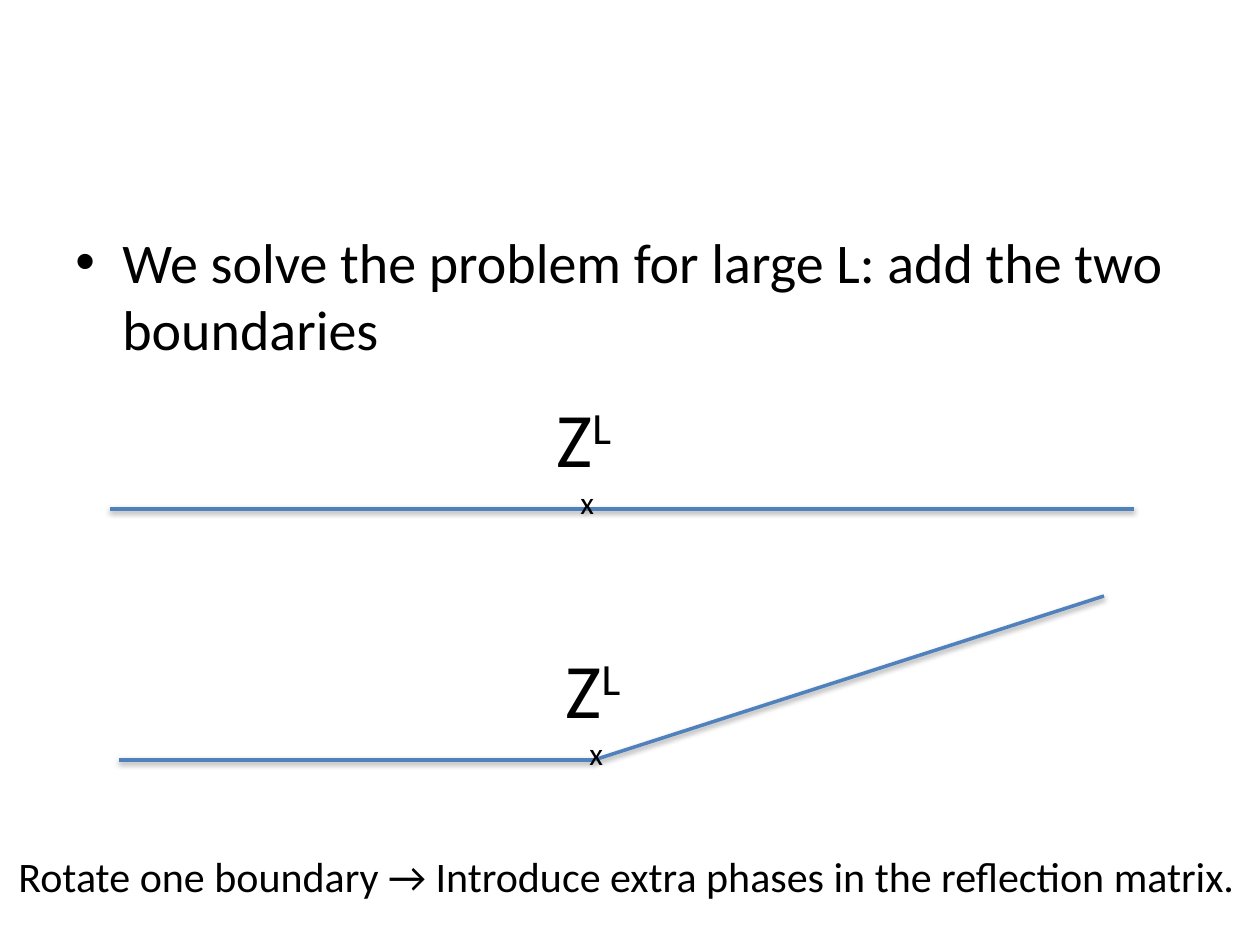
import pptx
import pptx.dml.color
import pptx.enum.shapes
import pptx.enum.text
import pptx.util
from lxml import etree

PX = 914400 / 126
BLACK = pptx.dml.color.RGBColor(0x00, 0x00, 0x00)
BLUE = pptx.dml.color.RGBColor(0x4F, 0x81, 0xBD)


def px(length):
    return pptx.util.Emu(round(length * PX))


def add_text(slide, left, top, width, height, text, size, wrap=False):
    shape = slide.shapes.add_textbox(px(left), px(top), px(width), px(height))
    frame = shape.text_frame
    frame.word_wrap = wrap
    if not wrap:
        frame.auto_size = pptx.enum.text.MSO_AUTO_SIZE.SHAPE_TO_FIT_TEXT
    paragraph = frame.paragraphs[0]
    paragraph.add_run().text = text
    if wrap:
        properties = paragraph._p.get_or_add_pPr()
        properties.set("marL", str(px(47)))
        properties.set("indent", str(px(-47)))
        namespace = pptx.oxml.ns.qn("a:buFont")
        etree.SubElement(properties, namespace, typeface="Arial")
        etree.SubElement(properties, pptx.oxml.ns.qn("a:buChar"), char="•")
    paragraph.font.name = "Calibri"
    paragraph.font.size = pptx.util.Pt(size)
    paragraph.font.color.rgb = BLACK
    return paragraph


presentation = pptx.Presentation()
presentation.slide_width = px(1260)
presentation.slide_height = px(945)
slide = presentation.slides.add_slide(presentation.slide_layouts[6])

# Bullet statement
add_text(slide, 63, 221, 1134, 624,
         "We solve the problem for large L: add the two boundaries", 32, wrap=True)

# Boundaries, straight and rotated: start, marked point and end of each
boundaries = [
    ((110, 509), (585, 509), (1134, 509)),
    ((119, 760), (594, 760), (1104, 596)),
]
for start, point, end in boundaries:
    for (x1, y1), (x2, y2) in ((start, point), (point, end)):
        # The connector keeps the soft shadow of the theme
        line = slide.shapes.add_connector(
            pptx.enum.shapes.MSO_CONNECTOR.STRAIGHT, px(x1), px(y1), px(x2), px(y2))
        line.line.color.rgb = BLUE
        line.line.width = pptx.util.Pt(2)

    x, y = point
    label = add_text(slide, x - 41, y - 125, 83, 106, "Z", 44)
    exponent = label.add_run()
    exponent.text = "L"
    exponent._r.get_or_add_rPr().set("baseline", "30000")
    add_text(slide, x - 17, y - 32, 39, 50, "x", 18)

# Conclusion
add_text(slide, 6, 844, 1263, 63,
         "Rotate one boundary → Introduce extra phases in the reflection matrix.", 24)

presentation.save("out.pptx")
